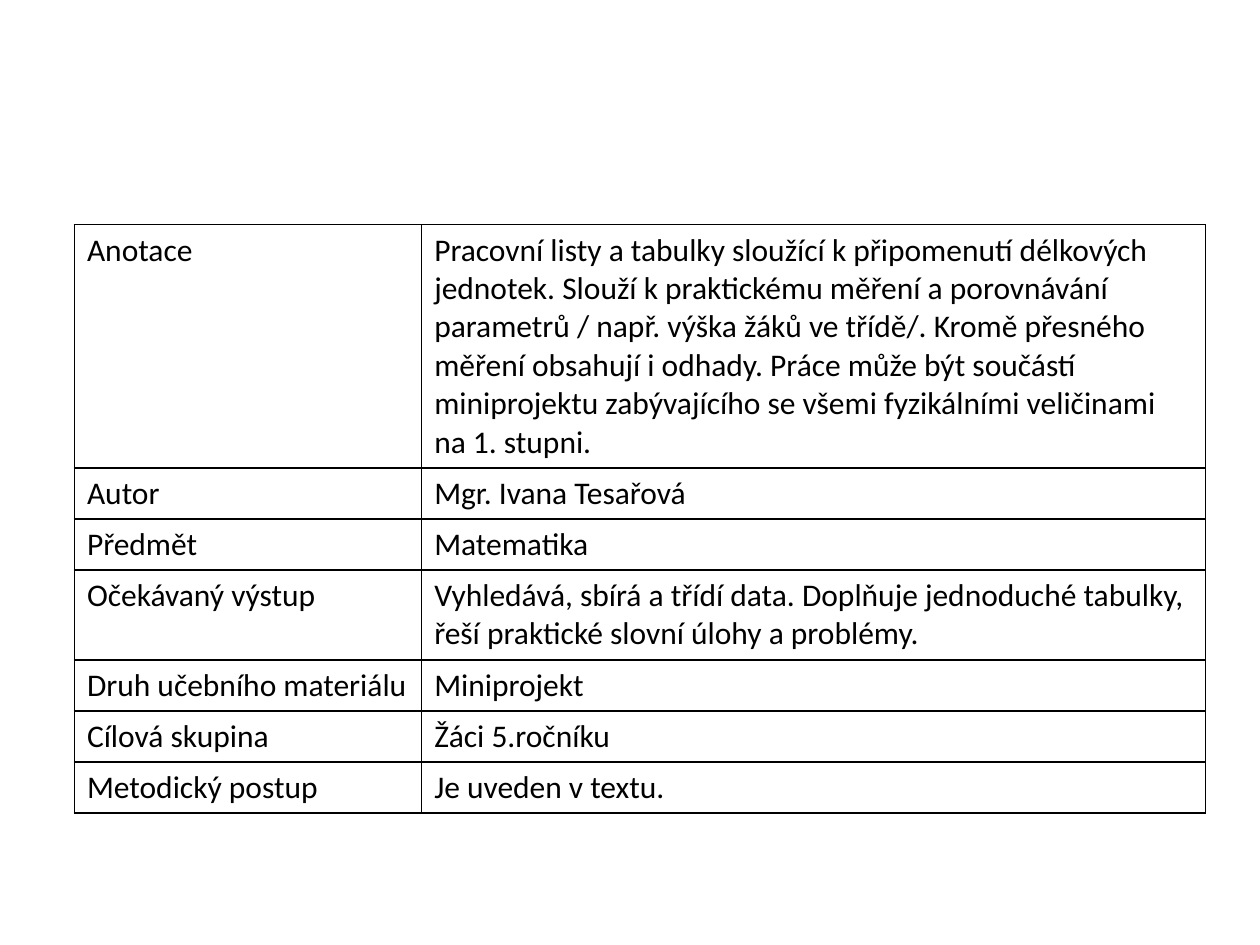
from lxml import etree
from pptx import Presentation
from pptx.dml.color import RGBColor
from pptx.oxml.ns import qn
from pptx.util import Cm, Pt

BLACK = RGBColor(0x00, 0x00, 0x00)
BORDER_SIDES = ("a:lnL", "a:lnR", "a:lnT", "a:lnB")
BLANK_LAYOUT = 6

COLUMN_WIDTHS = (7.0, 15.8)
FIRST_ROW_HEIGHT = 3.02
ROW_HEIGHT = 1.03

LESSON_DETAILS = (
    ("Anotace",
     "Pracovní listy a tabulky sloužící k připomenutí délkových jednotek. "
     "Slouží k praktickému měření a porovnávání parametrů / např. výška žáků "
     "ve třídě/. Kromě přesného měření obsahují i odhady. Práce může být "
     "součástí miniprojektu zabývajícího se všemi fyzikálními veličinami "
     "na 1. stupni."),
    ("Autor", "Mgr. Ivana Tesařová"),
    ("Předmět", "Matematika"),
    ("Očekávaný výstup",
     "Vyhledává, sbírá a třídí data. Doplňuje jednoduché tabulky, "
     "řeší praktické slovní úlohy a problémy."),
    ("Druh učebního materiálu", "Miniprojekt"),
    ("Cílová skupina", "Žáci 5.ročníku"),
    ("Metodický postup", "Je uveden v textu."),
)


class SlideBuilder:
    def __init__(self, slide, font="Calibri", size=18, color=BLACK, border=1):
        self.slide = slide
        self.font = font
        self.size = Pt(size)
        self.color = color
        self.border = Pt(border)

    def table(self, left, top, widths, heights, rows):
        frame = self.slide.shapes.add_table(
            len(rows), len(widths), Cm(left), Cm(top),
            Cm(sum(widths)), Cm(sum(heights)))
        table = frame.table
        table.first_row = False
        table.horz_banding = False
        for column, width in zip(table.columns, widths):
            column.width = Cm(width)
        for row, height, texts in zip(table.rows, heights, rows):
            row.height = Cm(height)
            for cell, text in zip(row.cells, texts):
                cell.fill.background()
                self.borders(cell)
                self.text(cell.text_frame.paragraphs[0], text)

    def text(self, paragraph, text):
        run = paragraph.add_run()
        run.text = text
        run.font.name = self.font
        run.font.size = self.size
        run.font.color.rgb = self.color

    def borders(self, cell):
        properties = cell._tc.get_or_add_tcPr()
        for index, side in enumerate(BORDER_SIDES):
            line = etree.Element(qn(side), w=str(self.border))
            fill = etree.SubElement(line, qn("a:solidFill"))
            etree.SubElement(fill, qn("a:srgbClr"), val=str(self.color))
            properties.insert(index, line)


def main():
    presentation = Presentation()
    presentation.slide_width = Cm(25.4)
    presentation.slide_height = Cm(19.05)
    layout = presentation.slide_layouts[BLANK_LAYOUT]
    builder = SlideBuilder(presentation.slides.add_slide(layout))
    heights = [FIRST_ROW_HEIGHT] + [ROW_HEIGHT] * (len(LESSON_DETAILS) - 1)
    builder.table(1.5, 4.53, COLUMN_WIDTHS, heights, LESSON_DETAILS)
    presentation.save("out.pptx")


if __name__ == "__main__":
    main()
